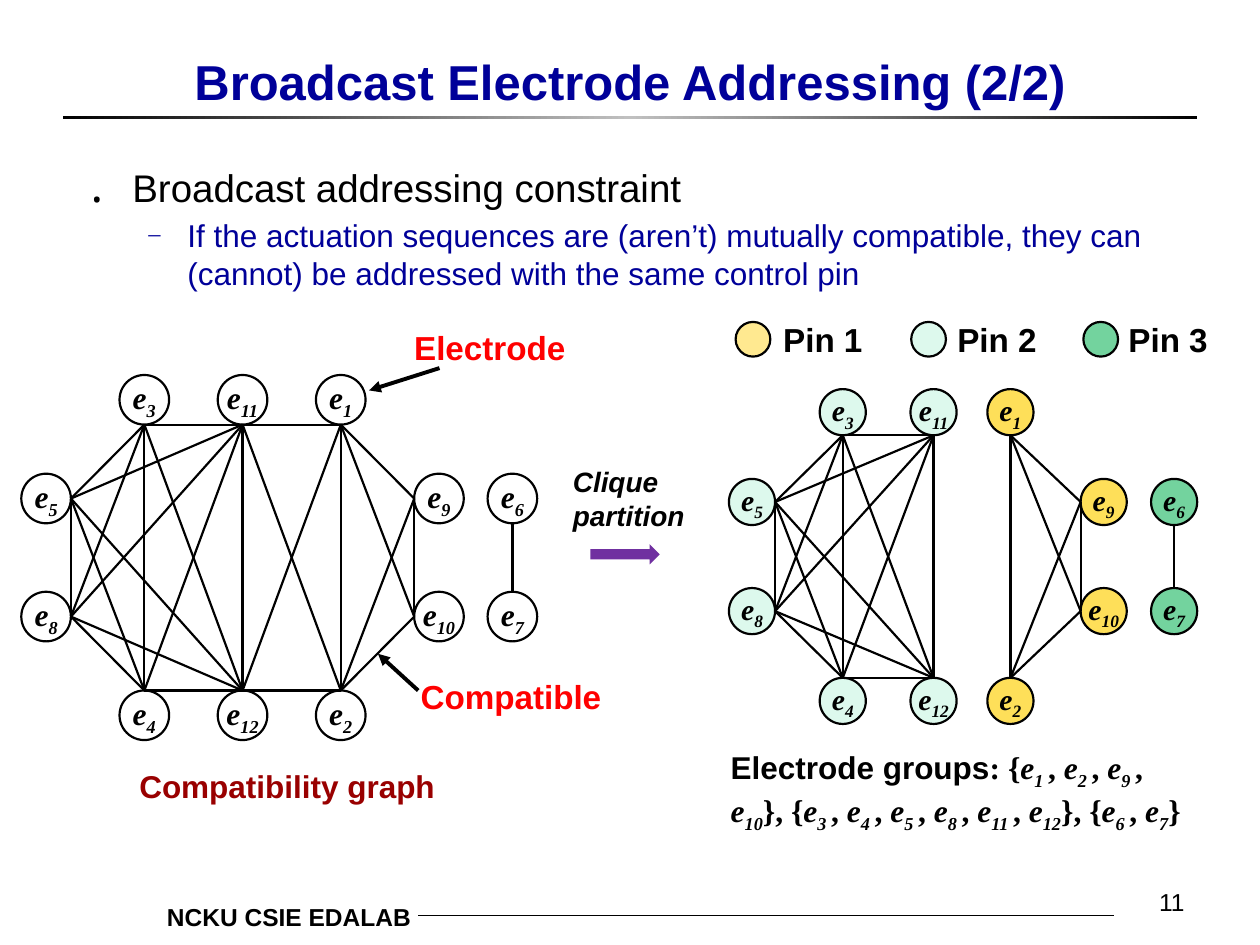
"""Build the slide on broadcast electrode addressing by clique partition."""
from copy import deepcopy
from itertools import combinations

from lxml import etree
from pptx import Presentation
from pptx.dml.color import RGBColor
from pptx.enum.shapes import MSO_CONNECTOR, MSO_SHAPE
from pptx.enum.text import MSO_ANCHOR, PP_ALIGN
from pptx.oxml.ns import qn
from pptx.util import Cm, Pt

LEFT, CENTER, RIGHT = PP_ALIGN.LEFT, PP_ALIGN.CENTER, PP_ALIGN.RIGHT
TOP, MIDDLE, BOTTOM = MSO_ANCHOR.TOP, MSO_ANCHOR.MIDDLE, MSO_ANCHOR.BOTTOM
OVAL, RECTANGLE, ARROW = MSO_SHAPE.OVAL, MSO_SHAPE.RECTANGLE, MSO_SHAPE.RIGHT_ARROW
STRAIGHT = MSO_CONNECTOR.STRAIGHT

THEME = {
    "sans": "Arial", "serif": "Times New Roman",
    "ink": "000000", "navy": "000099", "red": "FF0000", "maroon": "990000",
    "white": "FFFFFF", "silver": "C0C0C0", "purple": "7030A0",
    "yellow": "FEDF59", "pale yellow": "FFE990", "mint": "DDF9ED", "green": "00B050",
    "title": 28, "point": 22, "body": 18, "label": 19, "note": 16, "footer": 14,
    "node": 17, "thin": 0.5, "edge": 1.25, "pointer": 2.25,
}
ALPHA = {"green": 55}

# text, (left, top, width, height), size, colour, bold, italic, alignment, anchor
TEXTS = [
    ("NCKU CSIE EDALAB", (2.39, 18.06, 6.15, 0.86), "footer", "ink", True, False, RIGHT, TOP),
    ("Broadcast Electrode Addressing (2/2)", (1.9, 0, 21.6, 2.34), "title", "navy", True, False, CENTER, BOTTOM),
    ("11", (18.85, 17.32, 5.28, 1.27), "footer", "ink", False, False, RIGHT, BOTTOM),
    ("Compatibility graph", (0.69, 15.34, 10.2, 1.02), "body", "maroon", True, False, CENTER, TOP),
    ("Clique\npartition", (11.3, 9.25, 2.8, 1.63), "note", "ink", True, True, LEFT, TOP),
    ("Electrode", (8.1, 6.48, 4.2, 1.07), "label", "red", True, False, LEFT, TOP),
    ("Compatible", (8.23, 13.51, 4.2, 1.07), "label", "red", True, False, LEFT, TOP),
]
# text, bullet, bullet size %, left margin, hanging indent, size, colour
POINTS = [
    ("Broadcast addressing constraint", "․", 120, 0.95, 0.95, "point", "ink"),
    ("If the actuation sequences are (aren’t) mutually compatible, they can (cannot) be "
     "addressed with the same control pin", "─", 55, 2.06, 0.79, "body", "navy"),
]
# text, text left, marker left, marker colour
LEGEND = [("Pin 1", 15.54, 14.83, "pale yellow"), ("Pin 2", 19.05, 18.37, "mint"),
          ("Pin 3", 22.5, 21.84, "green")]
GROUPS = [(1, 2, 9, 10), (3, 4, 5, 8, 11, 12), (6, 7)]
GROUP_COLOURS = ["yellow", "mint", "green"]
CROSS_EDGES = [(1, 11), (1, 12), (2, 11), (2, 12)]

# electrode: column, row, side where its edges meet (x, y)
LAYOUT = {
    3: (1, 0, (0, 1)), 11: (2, 0, (0, 1)), 1: (3, 0, (0, 1)),
    4: (1, 3, (0, -1)), 12: (2, 3, (0, -1)), 2: (3, 3, (0, -1)),
    5: (0, 1, (1, 0)), 8: (0, 2, (1, 0)), 9: (4, 1, (-1, 0)), 10: (4, 2, (-1, 0)),
    6: (5, 1, (0, 1)), 7: (5, 2, (0, -1)),
}
COMPATIBILITY = {"columns": (0.93, 2.91, 4.89, 6.87, 8.85, 10.33),
                 "rows": (8.06, 10.05, 12.43, 14.42), "diameter": 1, "size": "body"}
PARTITION = {"columns": (15.16, 16.99, 18.82, 20.37, 22.25, 23.67),
             "rows": (8.31, 10.12, 12.32, 14.13), "diameter": 0.93, "size": "node"}
POINTERS = [((8.86, 7.42), (7.44, 7.87)), ((8.43, 13.92), (7.62, 13.18))]

deck = Presentation()
deck.slide_width, deck.slide_height = Cm(25.4), Cm(19.05)
slide = deck.slides.add_slide(deck.slide_layouts[6])


def rgb(name):
    return RGBColor.from_string(THEME[name])


def style(run, size, colour, bold=False, italic=False, face="sans", lowered=False):
    run.font.name, run.font.size = THEME[face], Pt(THEME[size])
    run.font.bold, run.font.italic = bold, italic
    run.font.color.rgb = rgb(colour)
    if lowered:
        run.font._element.set("baseline", "-25000")


def add_frame(place, anchor=TOP):
    frame = slide.shapes.add_textbox(*map(Cm, place)).text_frame
    frame.word_wrap, frame.vertical_anchor = True, anchor
    return frame


def add_text(text, place, size, colour, bold, italic, align, anchor):
    frame = add_frame(place, anchor)
    frame.text = text
    for paragraph in frame.paragraphs:
        paragraph.alignment = align
        style(paragraph.runs[0], size, colour, bold, italic)


def add_figure(kind, place, colour, outlined=True):
    figure = slide.shapes.add_shape(kind, *map(Cm, place))
    figure.shadow.inherit = False
    figure.fill.solid()
    figure.fill.fore_color.rgb = rgb(colour)
    if colour in ALPHA:
        tint = figure._element.spPr.find(f".//{qn('a:srgbClr')}")
        etree.SubElement(tint, qn("a:alpha"), val=str(ALPHA[colour] * 1000))
    if outlined:
        figure.line.color.rgb, figure.line.width = rgb("ink"), Pt(THEME["edge"])
    else:
        figure.line.fill.background()
    return figure


def add_line(start, end, weight, arrow=False):
    line = slide.shapes.add_connector(STRAIGHT, *map(Cm, (*start, *end)))
    line.line.color.rgb, line.line.width = rgb("ink"), Pt(THEME[weight])
    if arrow:
        etree.SubElement(line.line._get_or_add_ln(), qn("a:tailEnd"), type="triangle")
    etree.SubElement(line._element.spPr, qn("a:effectLst"))


def add_runs(paragraph, parts, size):
    for text, look in parts:
        run = paragraph.add_run()
        run.text = text
        style(run, size, "ink", bold=True, **look)


def electrode(number, gap=""):
    name = {"face": "serif", "italic": True}
    return [("e", name), (f"{number}{gap}", {**name, "lowered": True})]


def add_graph(graph, colours, edges):
    ports, radius = {}, graph["diameter"] / 2
    for number, (column, row, (side_x, side_y)) in LAYOUT.items():
        x, y = graph["columns"][column], graph["rows"][row]
        place = (x - radius, y - radius, 2 * radius, 2 * radius)
        frame = add_figure(OVAL, place, colours[number]).text_frame
        frame.margin_left = frame.margin_right = frame.margin_top = frame.margin_bottom = 0
        frame.vertical_anchor, frame.word_wrap = MIDDLE, False
        frame.paragraphs[0].alignment = CENTER
        add_runs(frame.paragraphs[0], electrode(number), graph["size"])
        ports[number] = (x + side_x * radius, y + side_y * radius)
    for first, second in edges:
        add_line(ports[first], ports[second], "edge")


def add_points():
    frame = add_frame((1.47, 3.18, 22.43, 13.77))
    for index, (text, bullet, percent, margin, hanging, size, colour) in enumerate(POINTS):
        paragraph = frame.add_paragraph() if index else frame.paragraphs[0]
        paragraph.text = text
        if index:
            paragraph.level, paragraph.space_before = index, Pt(THEME[size] * 0.2)
        layout = paragraph._p.get_or_add_pPr()
        layout.set("marL", str(Cm(margin)))
        layout.set("indent", str(-Cm(hanging)))
        bullet_colour = etree.SubElement(layout, qn("a:buClr"))
        etree.SubElement(bullet_colour, qn("a:srgbClr"), val=THEME[colour])
        etree.SubElement(layout, qn("a:buSzPct"), val=str(percent * 1000))
        etree.SubElement(layout, qn("a:buFont"), typeface=THEME["sans"])
        etree.SubElement(layout, qn("a:buChar"), char=bullet)
        style(paragraph.runs[0], size, colour)


def add_title_rule():
    rule = add_figure(RECTANGLE, (1.27, 2.33, 22.86, 0.08), "ink", outlined=False)
    rule.fill.gradient()
    rule.fill.gradient_angle = 0
    stops = rule._element.spPr.find(f".//{qn('a:gsLst')}")
    stops.insert(1, deepcopy(stops[0]))
    for index, (stop, colour) in enumerate(zip(rule.fill.gradient_stops, ("ink", "silver", "ink"))):
        stop.position, stop.color.rgb = index / 2, rgb(colour)


def add_group_list():
    plain = {"face": "serif"}
    parts = [("Electrode groups", {}), (": {", plain)]
    for index, group in enumerate(GROUPS):
        parts += [("}, {", plain)] if index else []
        for number in group[:-1]:
            parts += electrode(number, " ") + [(", ", plain)]
        parts += electrode(group[-1])
    add_runs(add_frame((14.48, 14.96, 9.83, 1.8)).paragraphs[0], parts + [("}", plain)], "body")


add_title_rule()
add_line((8.43, 18.46), (22.45, 18.46), "thin")
for entry in TEXTS:
    add_text(*entry)
add_points()
cliques = [edge for group in GROUPS for edge in combinations(group, 2)]
pins = {number: colour for group, colour in zip(GROUPS, GROUP_COLOURS) for number in group}
add_graph(COMPATIBILITY, dict.fromkeys(LAYOUT, "white"), cliques + CROSS_EDGES)
add_graph(PARTITION, pins, cliques)
add_group_list()
for pin, text_left, marker_left, pin_colour in LEGEND:
    add_figure(OVAL, (marker_left, 6.49, 0.7, 0.7), pin_colour)
    add_text(pin, (text_left, 6.32, 2.36, 1.07), "label", "ink", True, False, LEFT, TOP)
add_figure(ARROW, (11.9, 10.97, 1.4, 0.41), "purple", outlined=False)
for tail, tip in POINTERS:
    add_line(tail, tip, "pointer", arrow=True)
deck.save("out.pptx")
